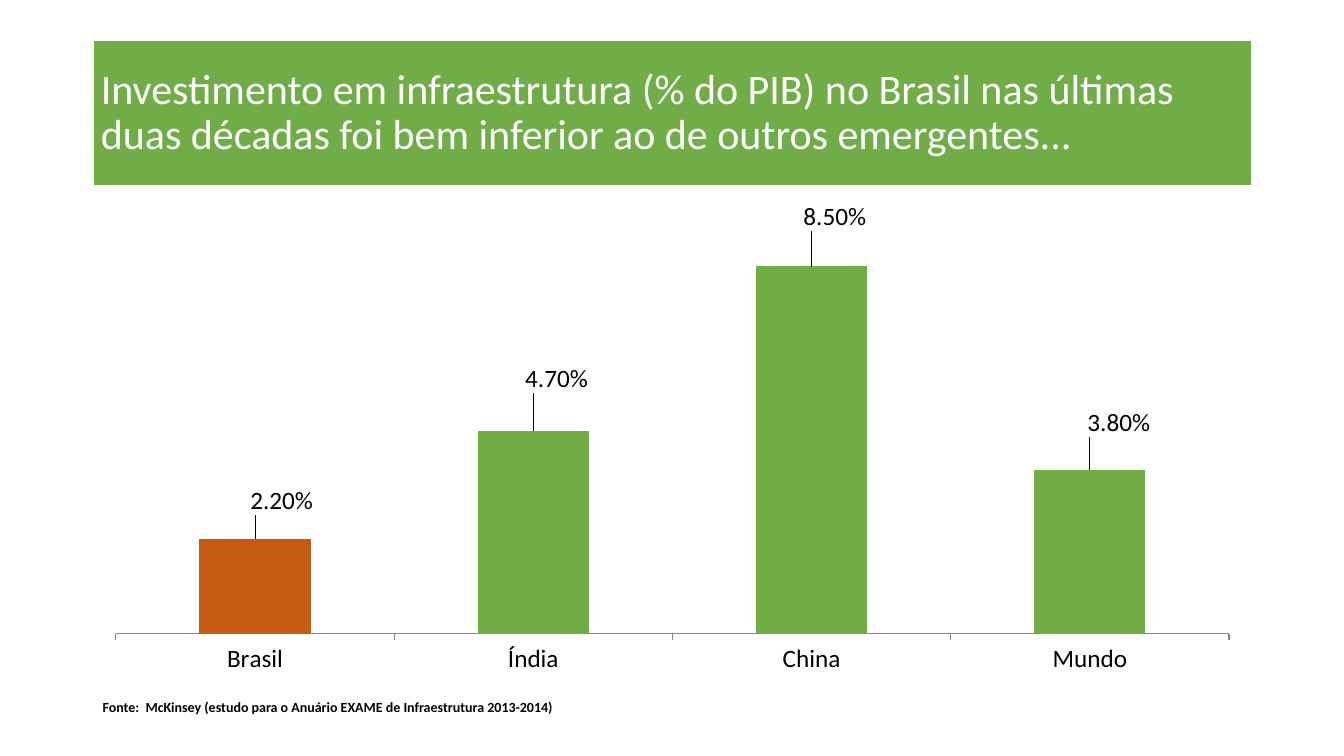
from lxml import etree
from pptx import Presentation
from pptx import util as u
from pptx.chart.data import CategoryChartData
from pptx.dml.color import RGBColor
from pptx.enum import chart as ch, text
from pptx.oxml import parse_xml
from pptx.oxml.ns import nsdecls, qn

GREEN, ORANGE, WHITE, BLACK = "70AD47", "C55A11", "FFFFFF", "000000"
LEFT, WIDTH = 0.92, 11.5
# Country, share of GDP, and label shift as a fraction of the chart's size
INVESTMENT = [
    ("Brasil", 0.022, 0.023, -0.04),
    ("Índia", 0.047, 0.02, -0.07),
    ("China", 0.085, 0.02, -0.065),
    ("Mundo", 0.038, 0.025, -0.06),
]


def rgb(color):
    return RGBColor.from_string(color)


def set_font(font, size, color, bold=False):
    font.name = "Calibri"
    font.size = u.Pt(size)
    font.bold = bold
    font.color.rgb = rgb(color)


def place(sp, left, top, width, height):
    sp.left, sp.top = u.Inches(left), u.Inches(top)
    sp.width, sp.height = u.Inches(width), u.Inches(height)


def write(sp, words, size, color, bold=False):
    tf = sp.text_frame
    tf.text = words
    tf.word_wrap = True
    tf.auto_size = text.MSO_AUTO_SIZE.NONE
    p = tf.paragraphs[0]
    p.alignment = text.PP_ALIGN.LEFT
    p.line_spacing = 0.9
    set_font(p.runs[0].font, size, color, bold)
    return tf


def add_title(s, words):
    sp = s.shapes.title
    place(sp, LEFT, 0.4, WIDTH, 1.45)
    sp.fill.solid()
    sp.fill.fore_color.rgb = rgb(GREEN)
    sp.line.color.rgb = rgb(WHITE)
    sp.line.width = u.Pt(1.5)
    tf = write(sp, words, 30, WHITE)
    tf.vertical_anchor = text.MSO_ANCHOR.MIDDLE
    tf.margin_left = tf.margin_right = u.Inches(0.08)
    tf.margin_top = tf.margin_bottom = u.Inches(0.04)


def add_source(s, words):
    sp = s.shapes.add_textbox(u.Inches(LEFT), u.Inches(6.9),
                              u.Inches(9.64), u.Inches(0.38))
    write(sp, words, 10, BLACK, True)


def manual_layout(inner="", **values):
    items = "".join(f'<c:{k} val="{v}"/>' for k, v in values.items())
    return parse_xml(f'<c:layout {nsdecls("c")}><c:manualLayout>{inner}{items}'
                     '</c:manualLayout></c:layout>')


def fix_plot_area(chart):
    area = chart.element.find(".//" + qn("c:plotArea"))
    for old in area.findall(qn("c:layout")):
        area.remove(old)
    modes = ('<c:layoutTarget val="inner"/><c:xMode val="edge"/>'
             '<c:yMode val="edge"/>')
    area.insert(0, manual_layout(modes, x=0.02, y=0.08, w=0.96, h=0.82))


def shift_label(series, index, dx, dy):
    label = series.points[index].data_label
    set_font(label.font, 18, BLACK)
    label.position = ch.XL_LABEL_POSITION.OUTSIDE_END
    for idx in series.data_labels._element.findall(
            f'{qn("c:dLbl")}/{qn("c:idx")}'):
        if idx.get("val") == str(index):
            number_format = etree.Element(
                qn("c:numFmt"), formatCode="0.00%", sourceLinked="0")
            idx.addnext(number_format)
            idx.addnext(manual_layout(x=dx, y=dy))


def add_investment_chart(s):
    data = CategoryChartData(number_format="0.00%")
    data.categories = [row[0] for row in INVESTMENT]
    data.add_series("Series 1", [row[1] for row in INVESTMENT])
    chart = s.shapes.add_chart(
        ch.XL_CHART_TYPE.COLUMN_CLUSTERED, u.Inches(LEFT), u.Inches(2),
        u.Inches(WIDTH), u.Inches(4.76), data).chart
    set_font(chart.font, 18, BLACK)
    chart.has_legend = chart.has_title = False
    fix_plot_area(chart)

    axis = chart.category_axis
    axis.major_tick_mark = ch.XL_TICK_MARK.OUTSIDE
    axis.format.line.color.rgb = rgb("868686")
    set_font(axis.tick_labels.font, 18, BLACK)
    values = chart.value_axis
    values.minimum_scale, values.maximum_scale = 0, 0.09
    values.has_major_gridlines = False
    values.visible = False

    plot = chart.plots[0]
    plot.gap_width = 150
    plot.vary_by_categories = False
    series = plot.series[0]
    series.format.fill.solid()
    series.format.fill.fore_color.rgb = rgb(GREEN)
    brasil = series.points[0].format.fill
    brasil.solid()
    brasil.fore_color.rgb = rgb(ORANGE)

    labels = series.data_labels
    labels.show_value = True
    labels.number_format = "0.00%"
    labels.number_format_is_linked = False
    set_font(labels.font, 18, BLACK)
    for i, (_, _, dx, dy) in enumerate(INVESTMENT):
        shift_label(series, i, dx, dy)


def main():
    prs = Presentation()
    prs.slide_width, prs.slide_height = u.Inches(13.33), u.Inches(7.5)
    s = prs.slides.add_slide(prs.slide_layouts[5])
    add_title(s, "Investimento em infraestrutura (% do PIB) no Brasil nas "
                 "últimas duas décadas foi bem inferior ao de outros "
                 "emergentes...")
    add_investment_chart(s)
    add_source(s, "Fonte:  McKinsey (estudo para o Anuário EXAME de "
                  "Infraestrutura 2013-2014)")
    prs.save("out.pptx")


if __name__ == "__main__":
    main()
